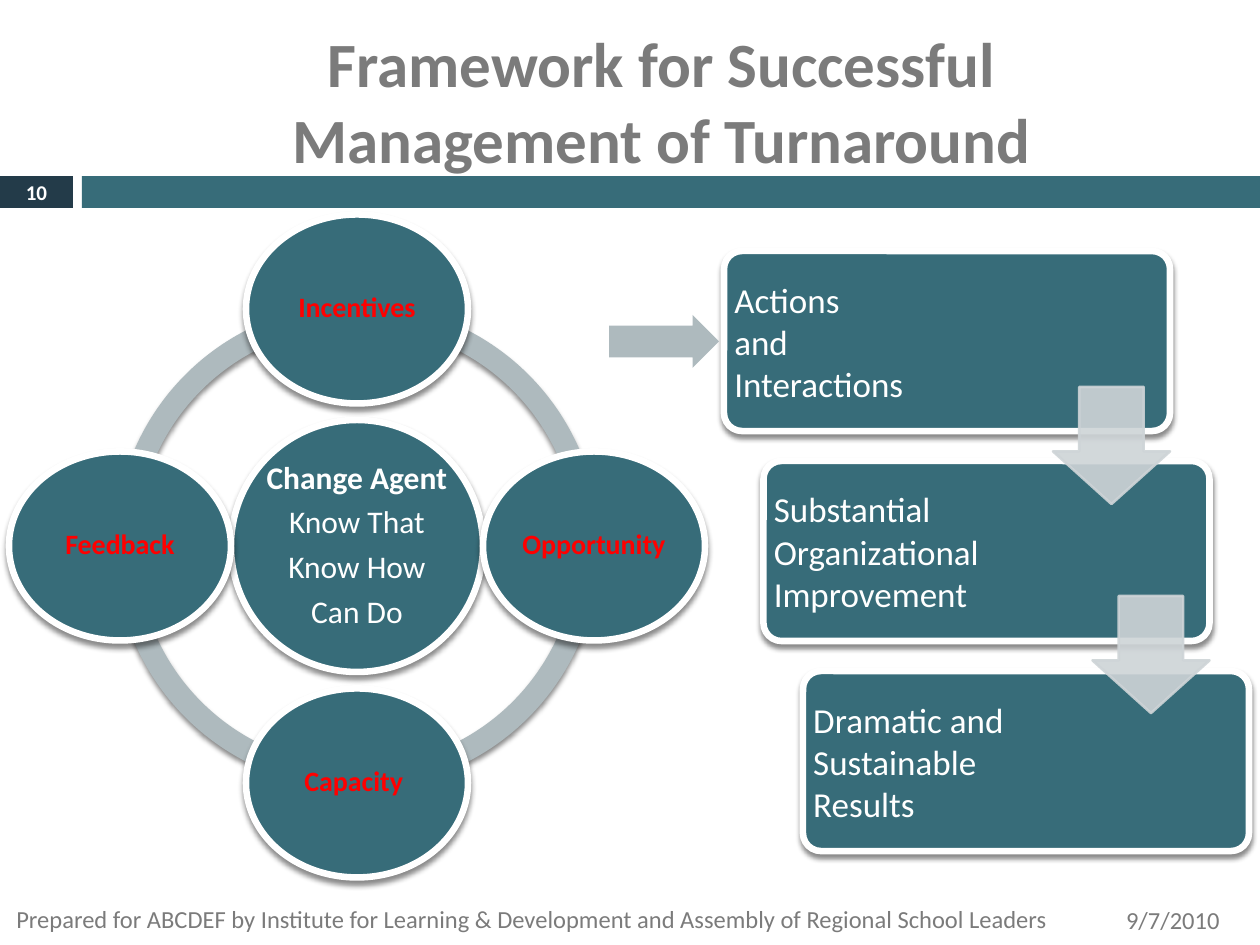
from dataclasses import dataclass

from lxml.etree import SubElement
from pptx import Presentation
from pptx.dml.color import RGBColor
from pptx.enum.shapes import MSO_SHAPE as Shape
from pptx.enum.text import MSO_ANCHOR as Anchor, PP_ALIGN as Align
from pptx.oxml.ns import qn
from pptx.util import Emu, Pt

EMU_PER_PX = 914400 / 126


@dataclass(frozen=True)
class Theme:
    font: str = "Calibri"
    teal: str = "376C79"
    navy: str = "233B49"
    ring: str = "AEBABE"
    pale: str = "CED4D7"
    white: str = "FFFFFF"
    red: str = "FF0000"
    gray: str = "7B7B7B"
    title_size: float = 36
    card_size: float = 20
    hub_size: float = 18
    node_size: float = 16
    footer_size: float = 14
    number_size: float = 12


THEME = Theme()


def px(value):
    return Emu(round(value * EMU_PER_PX))


def color(value):
    return RGBColor.from_string(value)


def set_alpha(fill, percent):
    """Make a solid fill partly transparent."""
    choice = fill._xPr.find(qn("a:solidFill"))[0]
    SubElement(choice, qn("a:alpha"), val=str(percent * 1000))


def add_shadow(shape):
    effects = shape._element.spPr.find(qn("a:effectLst"))
    outer = SubElement(effects, qn("a:outerShdw"), blurRad=str(Pt(3)),
                       dist=str(Pt(2.4)), dir="5400000", rotWithShape="0")
    black = SubElement(outer, qn("a:srgbClr"), val="000000")
    SubElement(black, qn("a:alpha"), val="45000")


def add_block(slide, kind, box, fill, line=None, line_width=3.75,
              adjustments=(), shadow=False):
    shape = slide.shapes.add_shape(kind, *map(px, box))
    shape.shadow.inherit = False
    shape.fill.solid()
    shape.fill.fore_color.rgb = color(fill)
    if line:
        shape.line.color.rgb = color(line)
        shape.line.width = Pt(line_width)
    else:
        shape.line.fill.background()
    for index, value in enumerate(adjustments):
        shape.adjustments[index] = value
    if shadow:
        add_shadow(shape)
    return shape


def write_text(frame, lines, size, ink, bold=(), align=Align.LEFT,
               insets=(13, 6, 13, 6), wrap=True):
    """Write one paragraph per line; bold holds the indexes of bold lines."""
    frame.word_wrap = wrap
    frame.vertical_anchor = Anchor.MIDDLE
    (frame.margin_left, frame.margin_top,
     frame.margin_right, frame.margin_bottom) = map(px, insets)
    for index, line in enumerate(lines):
        paragraph = frame.paragraphs[0] if index == 0 else frame.add_paragraph()
        paragraph.alignment = align
        for part_index, part in enumerate(line.split("\n")):
            if part_index:
                paragraph.add_line_break()
            run = paragraph.add_run()
            run.text = part
            run.font.name = THEME.font
            run.font.size = Pt(size)
            run.font.bold = index in bold
            run.font.color.rgb = color(ink)


def add_label(slide, box, text, size, ink, **style):
    label = slide.shapes.add_textbox(*map(px, box))
    write_text(label.text_frame, [text], size, ink, **style)


def add_title(slide):
    title = slide.shapes.title
    title.left, title.top, title.width, title.height = map(px, (84, 32, 1155, 136))
    write_text(title.text_frame,
               ["Framework for Successful\nManagement of Turnaround"],
               THEME.title_size, THEME.gray, bold=(0,), align=Align.CENTER)


def add_disc(slide, center, size, lines, text_size, ink):
    (x, y), (width, height) = center, size
    disc = add_block(slide, Shape.OVAL,
                     (x - width / 2, y - height / 2, width, height),
                     THEME.teal, THEME.white, shadow=True)
    write_text(disc.text_frame, lines, text_size, ink, bold=(0,),
               align=Align.CENTER, insets=(3, 3, 3, 3), wrap=False)
    for paragraph in disc.text_frame.paragraphs:
        paragraph.line_spacing = 0.9
        paragraph.space_after = Pt(6)


def add_cycle(slide):
    x, y, orbit, ring = 357, 546, 237, 485
    # Four quarter arcs; angles are in units of 100000/60000 degree
    for start, end in ((108, 162), (54, 108), (0, 54), (162, 0)):
        add_block(slide, Shape.BLOCK_ARC,
                  (x - ring / 2, y - ring / 2, ring, ring), THEME.ring,
                  adjustments=(start, end, 0.046), shadow=True)
    add_disc(slide, (x, y), (252, 252),
             ["Change Agent", "Know That", "Know How", "Can Do"],
             THEME.hub_size, THEME.white)
    nodes = (("Incentives", 0, -1), ("Opportunity", 1, 0),
             ("Capacity ", 0, 1), ("Feedback", -1, 0))
    for name, across, down in nodes:
        add_disc(slide, (x + across * orbit, y + down * orbit), (222, 189),
                 [name], THEME.node_size, THEME.red)


def add_steps(slide):
    step_x, step_y = 39.5, 210
    cards = (["Actions", "and", "Interactions"],
             ["Substantial Organizational Improvement"],
             ["Dramatic and Sustainable Results"])
    for index, lines in enumerate(cards):
        card = add_block(slide, Shape.ROUNDED_RECTANGLE,
                         (724 + index * step_x, 251 + index * step_y, 446, 180),
                         THEME.teal, THEME.white, adjustments=(0.1,), shadow=True)
        write_text(card.text_frame, lines, THEME.card_size, THEME.white,
                   insets=(5, 5, 161, 5))
    # Arrows overlap each pair of cards
    for index in range(len(cards) - 1):
        arrow = add_block(slide, Shape.DOWN_ARROW,
                          (1053 + index * step_x, 387 + index * 209, 117, 117),
                          THEME.pale, THEME.pale, line_width=1.5,
                          adjustments=(0.55, 0.45))
        set_alpha(arrow.fill, 90)
        set_alpha(arrow.line.fill, 90)


def add_footer(slide):
    add_label(slide, (1113, 895, 147, 50), "9/7/2010",
              THEME.footer_size, THEME.gray)
    add_label(slide, (0, 892, 1061, 53),
              "Prepared for ABCDEF by Institute for Learning & Development "
              "and Assembly of Regional School Leaders",
              THEME.footer_size, THEME.gray, align=Align.RIGHT)


def main():
    presentation = Presentation()
    presentation.slide_width, presentation.slide_height = px(1260), px(945)
    slide = presentation.slides.add_slide(presentation.slide_layouts[5])

    # Header band with slide number
    add_block(slide, Shape.RECTANGLE, (0, 176, 73, 32), THEME.navy)
    add_block(slide, Shape.RECTANGLE, (82, 176, 1178, 32), THEME.teal)
    add_title(slide)
    add_label(slide, (0, 175, 73, 34), "10", THEME.number_size, THEME.white,
              bold=(0,), align=Align.CENTER)

    # Cycle leading to the steps
    add_cycle(slide)
    add_steps(slide)
    add_block(slide, Shape.RIGHT_ARROW, (609, 315, 110, 53), THEME.ring,
              adjustments=(0.6, 0.5))
    add_footer(slide)
    presentation.save("out.pptx")


if __name__ == "__main__":
    main()
